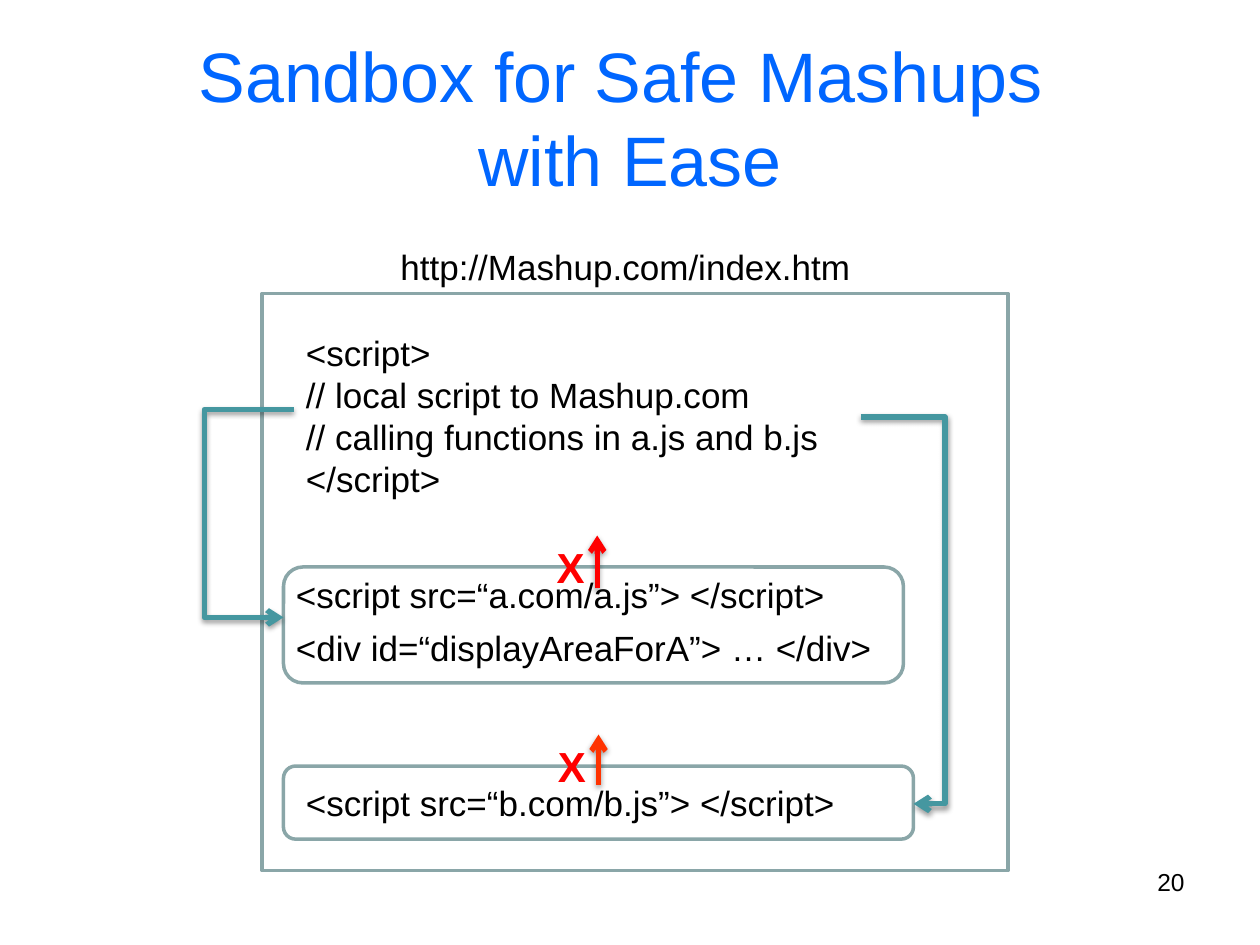
from lxml import etree
from pptx import Presentation
from pptx.dml.color import RGBColor
from pptx.enum.shapes import MSO_CONNECTOR, MSO_SHAPE
from pptx.enum.text import MSO_ANCHOR, PP_ALIGN
from pptx.oxml.ns import qn
from pptx.util import Inches, Pt

STRAIGHT, ELBOW = MSO_CONNECTOR.STRAIGHT, MSO_CONNECTOR.ELBOW
RECT, ROUNDED = MSO_SHAPE.RECTANGLE, MSO_SHAPE.ROUNDED_RECTANGLE
TOP, MIDDLE = MSO_ANCHOR.TOP, MSO_ANCHOR.MIDDLE
LEFT, CENTER, RIGHT = PP_ALIGN.LEFT, PP_ALIGN.CENTER, PP_ALIGN.RIGHT

BLUE = RGBColor(0x00, 0x66, 0xFF)
BLACK = RGBColor(0x00, 0x00, 0x00)
GRAY_TEAL = RGBColor(0x8A, 0xA6, 0xA8)
TEAL = RGBColor(0x45, 0x97, 0xA0)
RED = RGBColor(0xFF, 0x00, 0x00)
ORANGE_RED = RGBColor(0xFF, 0x33, 0x00)


def add_text(slide, box, lines, size=20, color=BLACK, bold=False,
             align=LEFT, anchor=TOP, wrap=True):
    """Write one paragraph per line in a text box."""
    frame = slide.shapes.add_textbox(*map(Inches, box)).text_frame
    frame.word_wrap = wrap
    frame.vertical_anchor = anchor
    frame.text = "\n".join(lines)
    for paragraph in frame.paragraphs:
        paragraph.alignment = align
        for run in paragraph.runs:
            run.font.name = "Arial"
            run.font.size = Pt(size)
            run.font.bold = bold
            run.font.color.rgb = color


def add_frame(slide, box, shape_type=ROUNDED):
    """Draw an unfilled outline."""
    outline = slide.shapes.add_shape(shape_type, *map(Inches, box))
    outline.shadow.inherit = False
    outline.fill.background()
    outline.line.color.rgb = GRAY_TEAL
    outline.line.width = Pt(2)


def add_arrow(slide, start, end, color, bend_x=None):
    """Draw a shadowed arrow, bent at bend_x when it is given."""
    kind = STRAIGHT if bend_x is None else ELBOW
    arrow = slide.shapes.add_connector(kind, *map(Inches, start + end))
    arrow.line.color.rgb = color
    arrow.line.width = Pt(3)
    properties = arrow.element.spPr
    line = properties.find(qn("a:ln"))
    etree.SubElement(line, qn("a:tailEnd"), type="arrow")
    effects = etree.SubElement(properties, qn("a:effectLst"))
    shadow = etree.SubElement(effects, qn("a:outerShdw"), blurRad="40000",
                              dist="20000", dir="5400000", rotWithShape="0")
    shade = etree.SubElement(shadow, qn("a:srgbClr"), val="000000")
    etree.SubElement(shade, qn("a:alpha"), val="38000")
    if bend_x is not None:
        ratio = (bend_x - start[0]) / (end[0] - start[0])
        guides = properties.find(qn("a:prstGeom")).find(qn("a:avLst"))
        etree.SubElement(guides, qn("a:gd"), name="adj1",
                         fmla=f"val {round(ratio * 100000)}")


def add_page(slide, box):
    """Place the mashup page with its address and local script."""
    left, top, _, _ = box
    add_frame(slide, box, RECT)
    add_text(slide, (left + 1, top - 0.43, 3.83, 0.44),
             ["http://Mashup.com/index.htm"])
    add_text(slide, (left + 0.25, top + 0.25, 4.5, 1.45),
             ["<script>", "// local script to Mashup.com",
              "// calling functions in a.js and b.js", "</script>"])


def add_sandbox(slide, box, lines, inset, pitch=0.42):
    """Place a sandbox outline and its lines of code."""
    left, top, width, _ = box
    inset_x, inset_y = inset
    for row, code in enumerate(lines):
        add_text(slide, (left + inset_x, top + inset_y + row * pitch,
                         width - inset_x, 0.44), [code])
    add_frame(slide, box)


def add_blocked_call(slide, box, color):
    """Place an upward arrow with a red X at its left."""
    left, top, width, height = box
    arrow_x = left + width
    add_arrow(slide, (arrow_x, top + height), (arrow_x, top), color)
    add_text(slide, (left, top, 0.43, 0.5), ["X"], size=24, color=RED,
             bold=True, wrap=False)


def main():
    """Build and save the slide."""
    deck = Presentation()
    deck.slide_width, deck.slide_height = Inches(10), Inches(7.5)
    slide = deck.slides.add_slide(deck.slide_layouts[6])

    add_text(slide, (0, 0.3, 10, 1.25), ["Sandbox for Safe Mashups \vwith Ease"],
             size=40, color=BLUE, align=CENTER, anchor=MIDDLE)
    add_text(slide, (7.17, 6.83, 2.33, 0.52), ["20"], size=14, align=RIGHT)
    add_page(slide, (2.08, 2.33, 5.92, 4.58))
    add_sandbox(slide, (2.25, 4.5, 4.92, 0.92),
                ["<script src=“a.com/a.js”> </script>",
                 "<div id=“displayAreaForA”> … </div>"], inset=(0, 0))
    add_sandbox(slide, (2.25, 6.08, 5, 0.58),
                ["<script src=“b.com/b.js”> </script>"], inset=(0.08, 0.07))
    add_arrow(slide, (2.33, 3.25), (2.25, 4.9), TEAL, bend_x=1.62)
    add_arrow(slide, (6.83, 3.31), (7.25, 6.38), TEAL, bend_x=7.5)
    add_blocked_call(slide, (4.32, 4.25, 0.42, 0.42), RED)
    add_blocked_call(slide, (4.33, 5.83, 0.42, 0.4), ORANGE_RED)

    deck.save("out.pptx")


if __name__ == "__main__":
    main()
